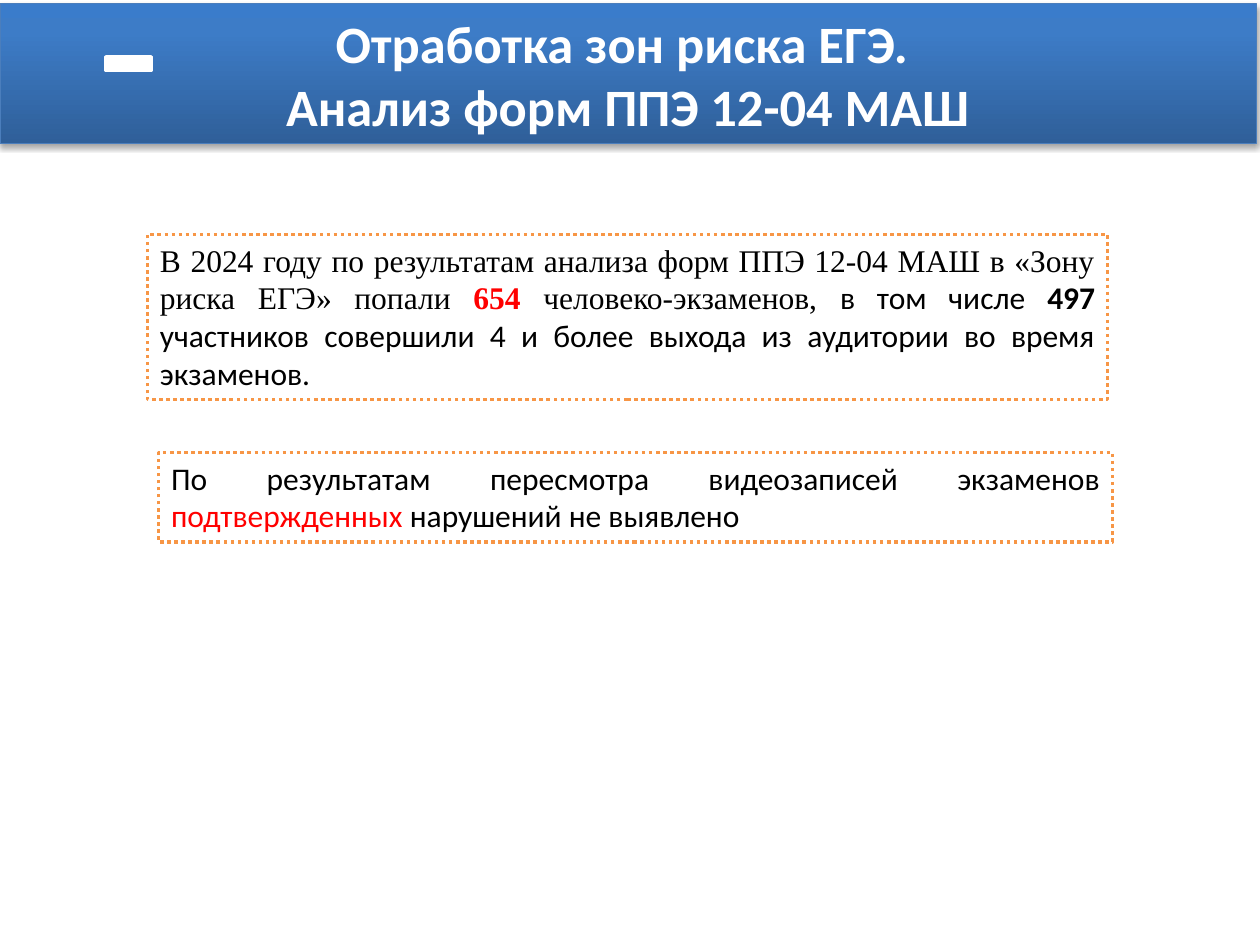
from dataclasses import dataclass

from lxml.etree import SubElement
from pptx import Presentation
from pptx.dml.color import RGBColor
from pptx.enum.dml import MSO_LINE
from pptx.enum.shapes import MSO_SHAPE
from pptx.enum.text import MSO_ANCHOR, MSO_AUTO_SIZE, PP_ALIGN
from pptx.oxml import parse_xml
from pptx.oxml.ns import nsdecls, qn
from pptx.util import Inches, Pt


@dataclass(frozen=True)
class Theme:
    white: str = "FFFFFF"
    ink: str = "000000"
    alert: str = "FF0000"
    frame: str = "F79646"
    banner_edge: str = "4B7EBC"
    banner_stops: tuple = ((0, "2F5F99"), (80, "3D7CC7"), (100, "3A7CCB"))
    sans: str = "Calibri"
    serif: str = "Times New Roman"
    title_size: int = 30
    body_size: int = 18
    hairline: float = 0.75
    outline: int = 2


THEME = Theme()


def rgb(code):
    return RGBColor.from_string(code)


def place(part, box):
    part.left, part.top, part.width, part.height = map(Inches, box)


def add_run(paragraph, text, size, font=THEME.sans, color=THEME.ink, bold=False):
    run = paragraph.add_run()
    run.text = text
    run.font.size = Pt(size)
    run.font.name = font
    run.font.bold = bold
    run.font.color.rgb = rgb(color)


def set_outline(part, color, width):
    part.line.color.rgb = rgb(color)
    part.line.width = Pt(width)


def add_panel(slide, box, edge):
    panel = slide.shapes.add_shape(MSO_SHAPE.RECTANGLE, *map(Inches, box))
    panel.shadow.inherit = False
    panel.fill.solid()
    panel.fill.fore_color.rgb = rgb(THEME.white)
    set_outline(panel, edge, THEME.outline)
    return panel


def fill_gradient(banner, stops):
    banner.fill.gradient()
    banner.fill.gradient_angle = 90
    stop_list = next(banner.element.spPr.iter(qn("a:gsLst")))
    for stop in list(stop_list):
        stop_list.remove(stop)
    for position, color in stops:
        stop = SubElement(stop_list, qn("a:gs"), pos=str(position * 1000))
        SubElement(stop, qn("a:srgbClr"), val=color)


def add_shadow(banner):
    banner.element.spPr.append(parse_xml(
        f'<a:effectLst {nsdecls("a")}>'
        f'<a:outerShdw blurRad="{Pt(3.1)}" dist="{Pt(1.8)}" dir="5400000" rotWithShape="0">'
        f'<a:srgbClr val="{THEME.ink}"><a:alpha val="35000"/></a:srgbClr>'
        '</a:outerShdw></a:effectLst>'))


def build_banner(slide, box, lines):
    banner = slide.shapes.title
    place(banner, box)
    fill_gradient(banner, THEME.banner_stops)
    set_outline(banner, THEME.banner_edge, THEME.hairline)
    add_shadow(banner)

    frame = banner.text_frame
    frame.word_wrap = False
    frame.auto_size = MSO_AUTO_SIZE.NONE
    frame.vertical_anchor = MSO_ANCHOR.MIDDLE
    for index, line in enumerate(lines):
        paragraph = frame.add_paragraph() if index else frame.paragraphs[0]
        paragraph.alignment = PP_ALIGN.CENTER
        paragraph.space_before = Pt(0)
        add_run(paragraph, line, THEME.title_size, color=THEME.white, bold=True)

    left, top, _, _ = box
    add_panel(slide, (left + 0.84, top + 0.42, 0.36, 0.11), THEME.white)


def build_finding(slide, box, runs):
    finding = add_panel(slide, box, THEME.frame)
    finding.line.dash_style = MSO_LINE.ROUND_DOT
    frame = finding.text_frame
    frame.word_wrap = True
    frame.auto_size = MSO_AUTO_SIZE.SHAPE_TO_FIT_TEXT
    frame.vertical_anchor = MSO_ANCHOR.TOP
    paragraph = frame.paragraphs[0]
    paragraph.alignment = PP_ALIGN.JUSTIFY
    for text, style in runs:
        add_run(paragraph, text, THEME.body_size, **style)


def main():
    deck = Presentation()
    deck.slide_width, deck.slide_height = Inches(10), Inches(7.5)
    slide = deck.slides.add_slide(deck.slide_layouts[5])

    build_banner(slide, (0, 0.03, 9.97, 1.11),
                 ("Отработка зон риска ЕГЭ. ", "Анализ форм ППЭ 12-04 МАШ"))

    serif = {"font": THEME.serif}
    build_finding(slide, (1.17, 1.86, 7.62, 1.31), (
        ("В 2024 году по результатам анализа форм ППЭ 12-04 МАШ в «Зону риска ЕГЭ» попали ", serif),
        ("654", {**serif, "color": THEME.alert, "bold": True}),
        (" человеко-экзаменов, ", serif),
        ("в том числе ", {}),
        ("497", {"bold": True}),
        (" участников совершили 4 и более выхода из аудитории во время экзаменов. ", {}),
    ))
    build_finding(slide, (1.26, 3.59, 7.57, 0.71), (
        ("По результатам пересмотра видеозаписей экзаменов ", {}),
        ("подтвержденных", {"color": THEME.alert}),
        (" нарушений не выявлено", {}),
    ))

    deck.save("out.pptx")


if __name__ == "__main__":
    main()
